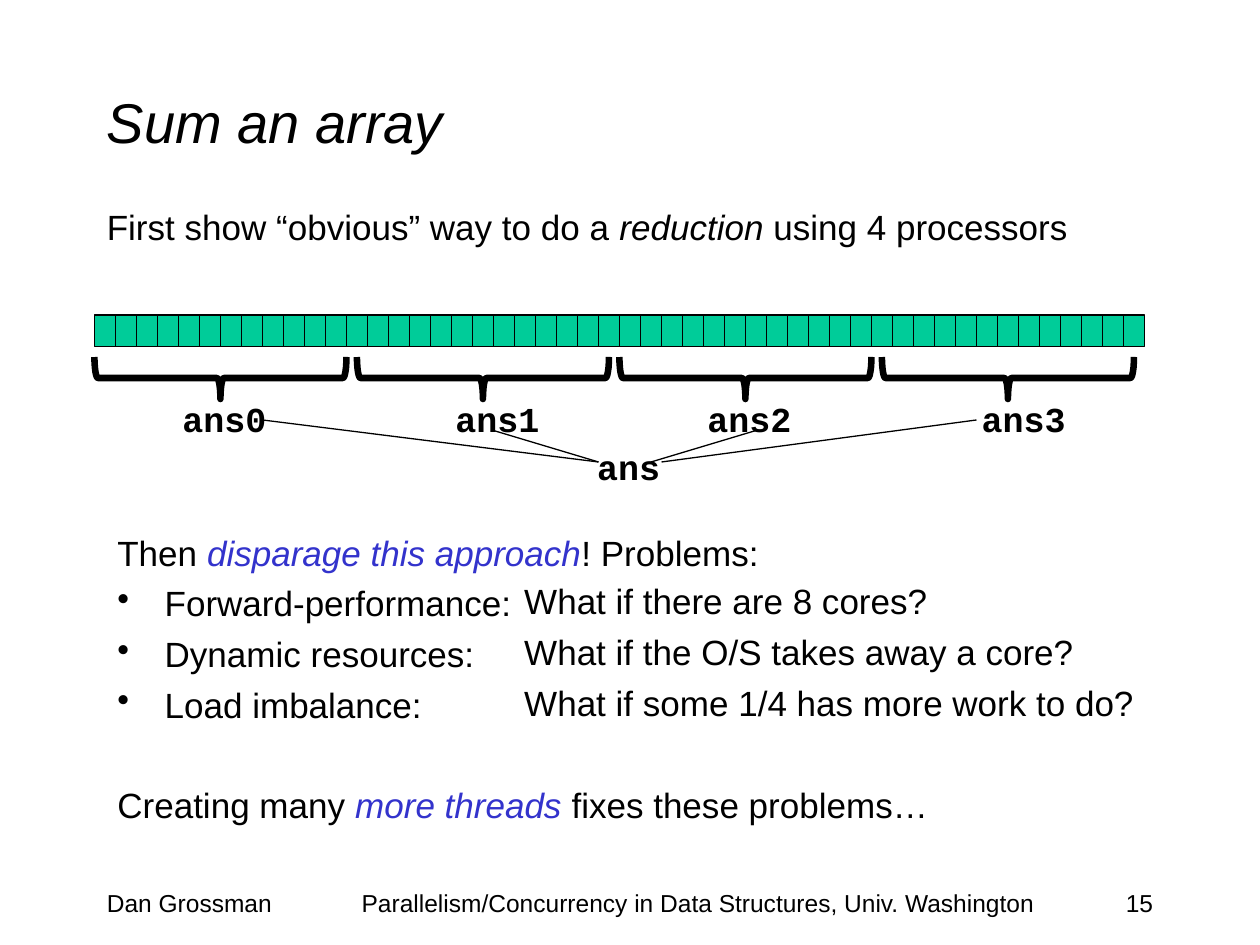
from lxml import etree
from pptx import Presentation
from pptx import util as u
from pptx.dml.color import RGBColor
from pptx.enum import shapes, text
from pptx.oxml.ns import qn

PX = 9525  # EMU per px, 96 px to the inch
COLORS = {"ink": "000000", "accent": "3333CC", "cell": "00CC99"}
SANS, MONO = "Arial", "Courier New"
LEFT, CENTER, RIGHT = text.PP_ALIGN.LEFT, text.PP_ALIGN.CENTER, text.PP_ALIGN.RIGHT
HANGING = 36
LINE_GAP, BLOCK_GAP = 5, 33  # pt
LINE_PITCH = 37

# A paragraph is a list of (words, style) runs.
TITLE = [("Sum an array", "italic")]
INTRO = [("First show “obvious” way to do a ", ""), ("reduction", "italic"),
         (" using 4 processors", "")]
CRITIQUE = [("Then ", ""), ("disparage this approach", "accent"),
            ("! Problems:", "")]
PROBLEMS = [
    ("Forward-performance:", "What if there are 8 cores?"),
    ("Dynamic resources:", "What if the O/S takes away a core?"),
    ("Load imbalance:", "What if some 1/4 has more work to do?"),
]
REMEDY = [("Creating many ", ""), ("more threads ", "accent"),
          ("fixes these problems…", "")]
FOOTER = [  # words, left, width, alignment
    ("Dan Grossman", 72, 200, LEFT),
    ("15", 688, 200, RIGHT),
    ("Parallelism/Concurrency in Data Structures, Univ. Washington", 264, 536, CENTER),
]
RESULTS = [  # words, centre, top
    ("ans0", 171, 298), ("ans1", 379, 298), ("ans2", 571, 298),
    ("ans3", 780, 298), ("ans", 479, 335),
]
COMBINE_LINES = [  # from, to
    ((200, 320), (456, 352)), ((376, 328), (456, 352)),
    ((576, 328), (496, 352)), ((744, 320), (504, 352)),
]
CELLS, CELL_W, CELL_H = 50, 16, 24
ARRAY_LEFT, ARRAY_TOP = 72, 240
BRACES, BRACE_LEFT, BRACE_PITCH = 4, 152, 200

prs = Presentation()
prs.slide_width, prs.slide_height = 960 * PX, 720 * PX
slide = prs.slides.add_slide(prs.slide_layouts[6])


def rgb(name):
    return RGBColor.from_string(COLORS[name])


def emu(*lengths):
    return [length * PX for length in lengths]


def add_text(box, paragraphs, size=20, align=LEFT, font=SANS, bold=False,
             anchor=text.MSO_ANCHOR.TOP):
    """Add a text box and return its paragraphs, spaced evenly after the first."""
    frame = slide.shapes.add_textbox(*emu(*box)).text_frame
    frame.word_wrap = True
    frame.vertical_anchor = anchor
    for i, runs in enumerate(paragraphs):
        paragraph = frame.paragraphs[0] if i == 0 else frame.add_paragraph()
        paragraph.alignment = align
        paragraph.space_before = u.Pt(LINE_GAP if i else 0)
        paragraph.font.name, paragraph.font.size = font, u.Pt(size)
        paragraph.font.bold = bold
        paragraph.font.color.rgb = rgb("ink")
        for words, style in runs:
            run = paragraph.add_run()
            run.text = words
            if style:
                run.font.italic = True
            if style == "accent":
                run.font.color.rgb = rgb("accent")
    return frame.paragraphs


def add_bullet(paragraph):
    props = paragraph._p.get_or_add_pPr()
    props.set("marL", str(HANGING * PX))
    props.set("indent", str(-HANGING * PX))
    bullet = etree.Element(qn("a:buChar"), char="•")
    props.find(qn("a:spcBef")).addnext(bullet)


def add_outlined(kind, box, weight, fill=None):
    shape = slide.shapes.add_shape(kind, *emu(*box))
    shape.shadow.inherit = False
    shape.line.color.rgb = rgb("ink")
    shape.line.width = u.Pt(weight)
    if fill:
        shape.fill.solid()
        shape.fill.fore_color.rgb = rgb(fill)
    else:
        shape.fill.background()
    return shape


add_text((72, 32, 816, 120), [TITLE], size=32, anchor=text.MSO_ANCHOR.MIDDLE)
add_text((72, 152, 816, 64), [INTRO])
for words, left, width, align in FOOTER:
    add_text((left, 672, width, 48), [[(words, "")]], size=14, align=align)

for i in range(CELLS):
    add_outlined(shapes.MSO_SHAPE.RECTANGLE,
                 (ARRAY_LEFT + i * CELL_W, ARRAY_TOP, CELL_W, CELL_H), 0.75, "cell")
for i in range(BRACES):
    brace = add_outlined(shapes.MSO_SHAPE.LEFT_BRACE,
                         (BRACE_LEFT + i * BRACE_PITCH, 192, 32, 192), 3.75)
    brace.rotation = 270

for words, center, top in RESULTS:
    add_text((center - 50, top, 100, 40), [[(words, "")]], align=CENTER,
             font=MONO, bold=True)
for start, end in COMBINE_LINES:
    line = slide.shapes.add_connector(shapes.MSO_CONNECTOR.STRAIGHT,
                                      *emu(*start, *end))
    line.line.color.rgb = rgb("ink")
    line.line.width = u.Pt(0.75)
    etree.SubElement(line._element.spPr, qn("a:effectLst"))

labels = [[(label, "")] for label, _ in PROBLEMS]
questions = [[(question, "")] for _, question in PROBLEMS]
critique, *bulleted, remedy = add_text((80, 400, 816, 256),
                                       [CRITIQUE, *labels, REMEDY])
for paragraph in bulleted:
    add_bullet(paragraph)
remedy.space_before = u.Pt(BLOCK_GAP)
add_text((390, 400 + LINE_PITCH, 506, 3 * LINE_PITCH + 10), questions)

prs.save("out.pptx")
